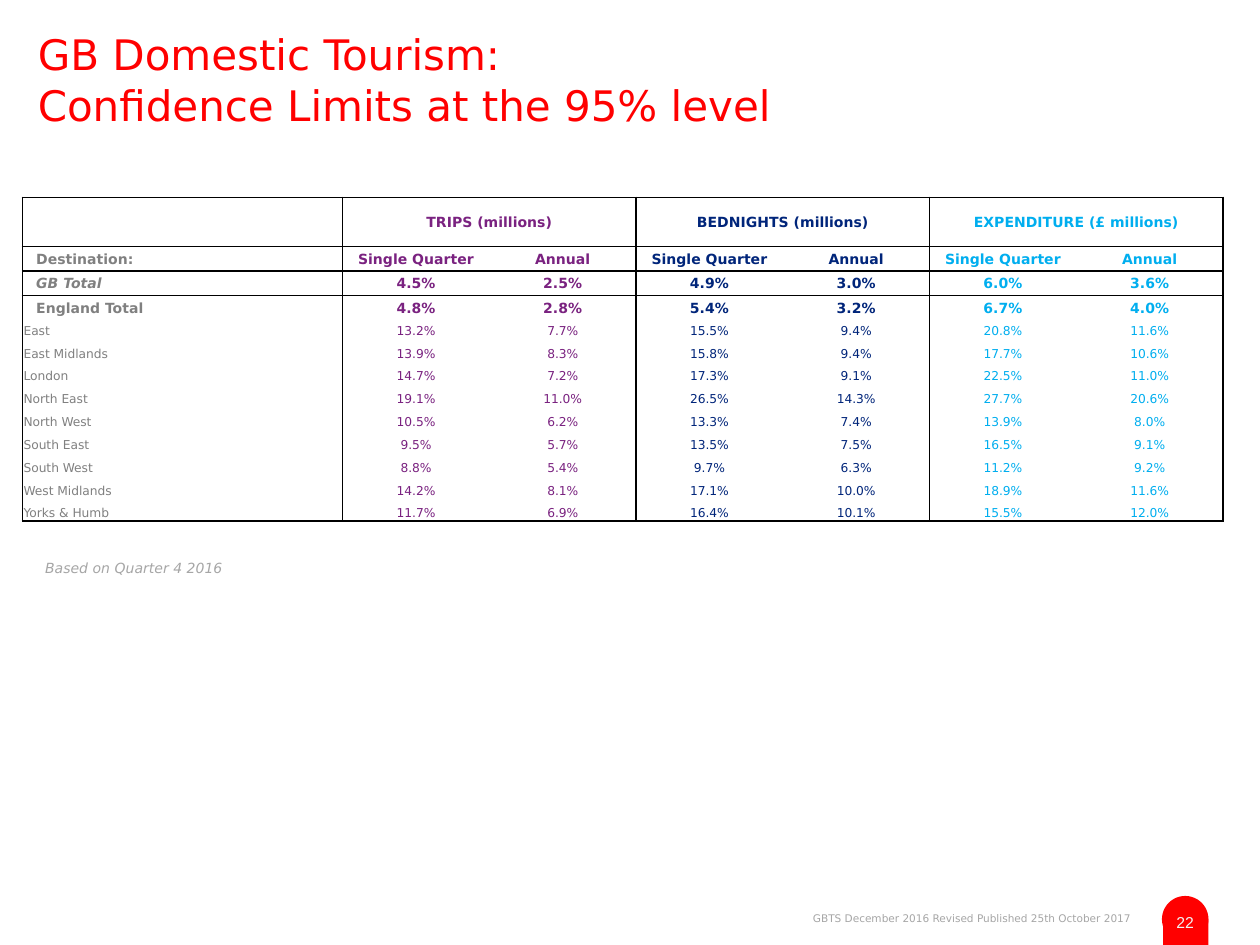
from lxml.etree import SubElement
from pptx import Presentation
from pptx.dml.color import RGBColor
from pptx.enum.shapes import MSO_SHAPE
from pptx.enum.text import MSO_ANCHOR, PP_ALIGN
from pptx.oxml.ns import qn
from pptx.util import Pt

RED = RGBColor(0xFF, 0x00, 0x00)
PALE = RGBColor(0xF2, 0xF2, 0xF2)
SILVER = RGBColor(0xA6, 0xA6, 0xA6)
GREY = RGBColor(0x80, 0x80, 0x80)
PURPLE = RGBColor(0x7A, 0x22, 0x80)
NAVY = RGBColor(0x00, 0x25, 0x7A)
CYAN = RGBColor(0x00, 0xAE, 0xEF)
BLACK = RGBColor(0x00, 0x00, 0x00)


def write(frame, text, color, align=PP_ALIGN.LEFT, **style):
    """Put one paragraph in the frame; style overrides the font defaults."""
    frame.word_wrap = True
    para = frame.paragraphs[0]
    para.text = text
    para.alignment = align
    look = {"name": "DejaVu Sans", "size": Pt(8), "bold": False, "italic": False}
    for run in para.runs:
        for key, value in (look | style).items():
            setattr(run.font, key, value)
        run.font.color.rgb = color
    return para


def rule(cell, sides):
    """Draw black lines on the listed sides of a cell and clear the others."""
    props = cell._tc.get_or_add_tcPr()
    for side in "LRTB":
        line = SubElement(props, qn(f"a:ln{side}"), w=str(Pt(1)))
        if side in sides:
            fill = SubElement(line, qn("a:solidFill"))
            SubElement(fill, qn("a:srgbClr"), val=str(BLACK))
        else:
            SubElement(line, qn("a:noFill"))


deck = Presentation()
deck.slide_width, deck.slide_height = Pt(720), Pt(540)
slide = deck.slides.add_slide(deck.slide_layouts[6])
shapes = slide.shapes

# Page number tab
for kind, left, top, width, height in [
    (MSO_SHAPE.RECTANGLE, 664.6, 524.9, 25.9, 15.8),
    (MSO_SHAPE.OVAL, 664, 512, 26.6, 26.6),
]:
    tab = shapes.add_shape(kind, Pt(left), Pt(top), Pt(width), Pt(height))
    tab.shadow.inherit = False
    tab.fill.solid()
    tab.fill.fore_color.rgb = RED
    tab.line.fill.background()
frame = tab.text_frame
for key, value in {"left": 0, "right": 0, "top": 2.9, "bottom": 0}.items():
    setattr(frame, f"margin_{key}", Pt(value))
frame.vertical_anchor = MSO_ANCHOR.MIDDLE
write(frame, "22", PALE, PP_ALIGN.CENTER, name="Arial", size=Pt(9))

# Title, note and footer
title = shapes.add_textbox(Pt(0), Pt(0), Pt(720), Pt(61)).text_frame
for key, value in {"left": 21.6, "right": 21.6, "top": 16.5, "bottom": 0}.items():
    setattr(title, f"margin_{key}", Pt(value))
write(title, "GB Domestic Tourism:\vConfidence Limits at the 95% level", RED, size=Pt(24))

note = shapes.add_textbox(Pt(18.7), Pt(316), Pt(537), Pt(17))
write(note.text_frame, "Based on Quarter 4 2016", SILVER, italic=True)

foot = shapes.add_textbox(Pt(116), Pt(517.7), Pt(537), Pt(14.4))
write(foot.text_frame, "GBTS December 2016 Revised Published 25th October 2017",
      SILVER, PP_ALIGN.RIGHT, size=Pt(6))

# Table of confidence limits
pair = ["Single Quarter", "Annual"]
rows = [
    ["", "TRIPS (millions)", "", "BEDNIGHTS (millions)", "", "EXPENDITURE (£ millions)", ""],
    ["Destination:"] + pair * 3,
    ["GB Total", "4.5%", "2.5%", "4.9%", "3.0%", "6.0%", "3.6%"],
    ["England Total", "4.8%", "2.8%", "5.4%", "3.2%", "6.7%", "4.0%"],
    ["East", "13.2%", "7.7%", "15.5%", "9.4%", "20.8%", "11.6%"],
    ["East Midlands", "13.9%", "8.3%", "15.8%", "9.4%", "17.7%", "10.6%"],
    ["London", "14.7%", "7.2%", "17.3%", "9.1%", "22.5%", "11.0%"],
    ["North East", "19.1%", "11.0%", "26.5%", "14.3%", "27.7%", "20.6%"],
    ["North West", "10.5%", "6.2%", "13.3%", "7.4%", "13.9%", "8.0%"],
    ["South East", "9.5%", "5.7%", "13.5%", "7.5%", "16.5%", "9.1%"],
    ["South West", "8.8%", "5.4%", "9.7%", "6.3%", "11.2%", "9.2%"],
    ["West Midlands", "14.2%", "8.1%", "17.1%", "10.0%", "18.9%", "11.6%"],
    ["Yorks & Humb", "11.7%", "6.9%", "16.4%", "10.1%", "15.5%", "12.0%"],
]
tints = [GREY, PURPLE, PURPLE, NAVY, NAVY, CYAN, CYAN]
wide = [183] + [83.85] * 6
high = [28, 14.2, 13.9, 14.9, 9.6] + [13.05] * 8
last = len(rows) - 1

grid = shapes.add_table(len(rows), len(wide), Pt(12.8), Pt(112.8),
                        Pt(sum(wide)), Pt(sum(high))).table
grid.first_row = grid.horz_banding = False
for col, width in zip(grid.columns, wide):
    col.width = Pt(width)
for row, height in zip(grid.rows, high):
    row.height = Pt(height)

for r, row in enumerate(rows):
    head = r < 4
    for c, text in enumerate(row):
        cell = grid.cell(r, c)
        for key, value in {"left": 0.7, "right": 0.7, "top": 0.7, "bottom": 0}.items():
            setattr(cell, f"margin_{key}", Pt(value))
        cell.vertical_anchor = MSO_ANCHOR.MIDDLE if head else MSO_ANCHOR.BOTTOM
        para = write(cell.text_frame, text, tints[c],
                     PP_ALIGN.CENTER if c else PP_ALIGN.LEFT,
                     size=Pt(8 if head else 7), bold=head,
                     italic=text == "GB Total")
        if head and c == 0:
            para._p.get_or_add_pPr().set("indent", str(Pt(7.2)))
        sides = "L" if c in (0, 1, 3, 5) else ""
        sides += "R" if c % 2 == 0 or r == 0 else ""
        sides += "T" if head else ""
        sides += "B" if r < 3 or r == last else ""
        rule(cell, sides)
        cell.fill.background()

for c in (1, 3, 5):
    grid.cell(0, c).merge(grid.cell(0, c + 1))

deck.save("out.pptx")
